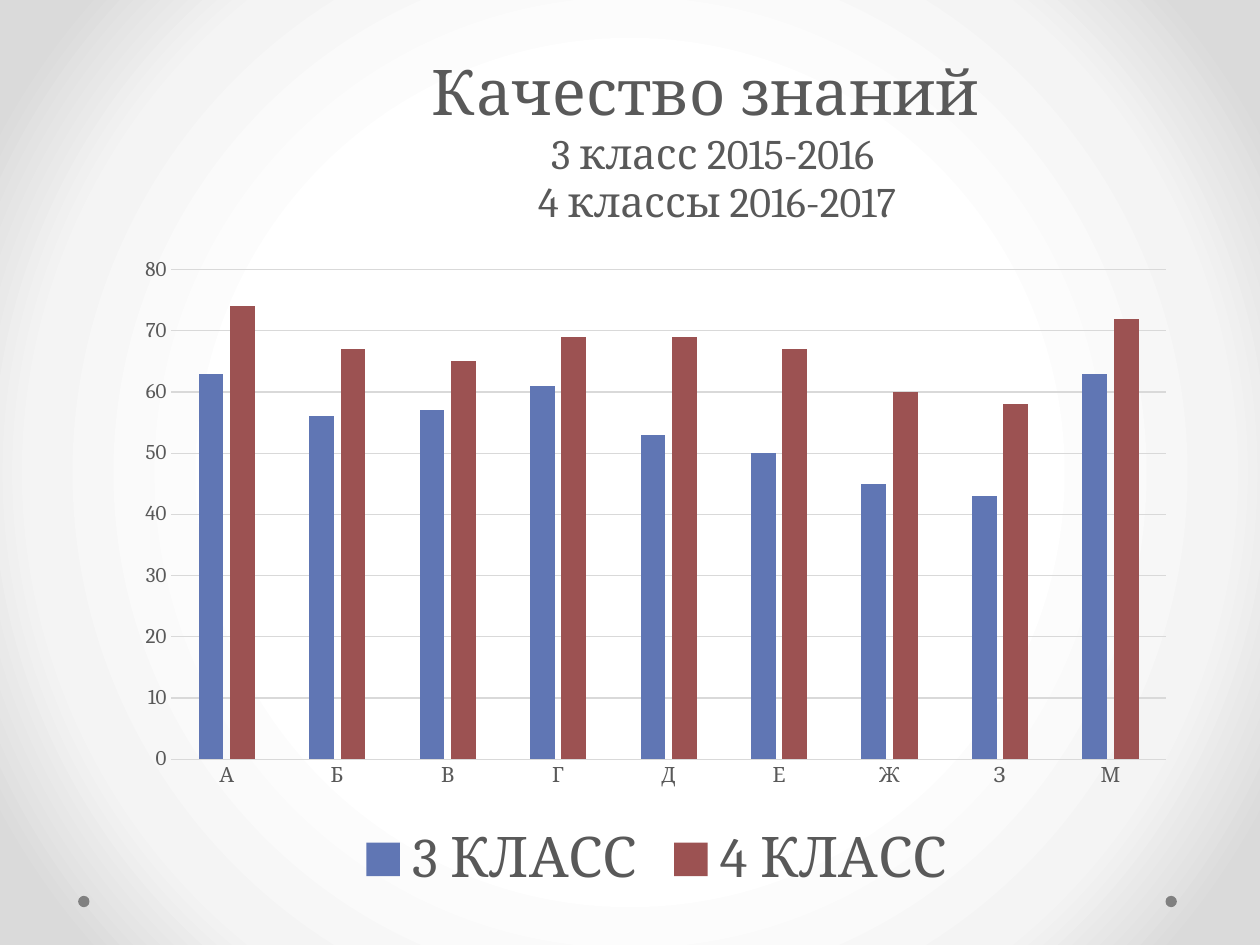
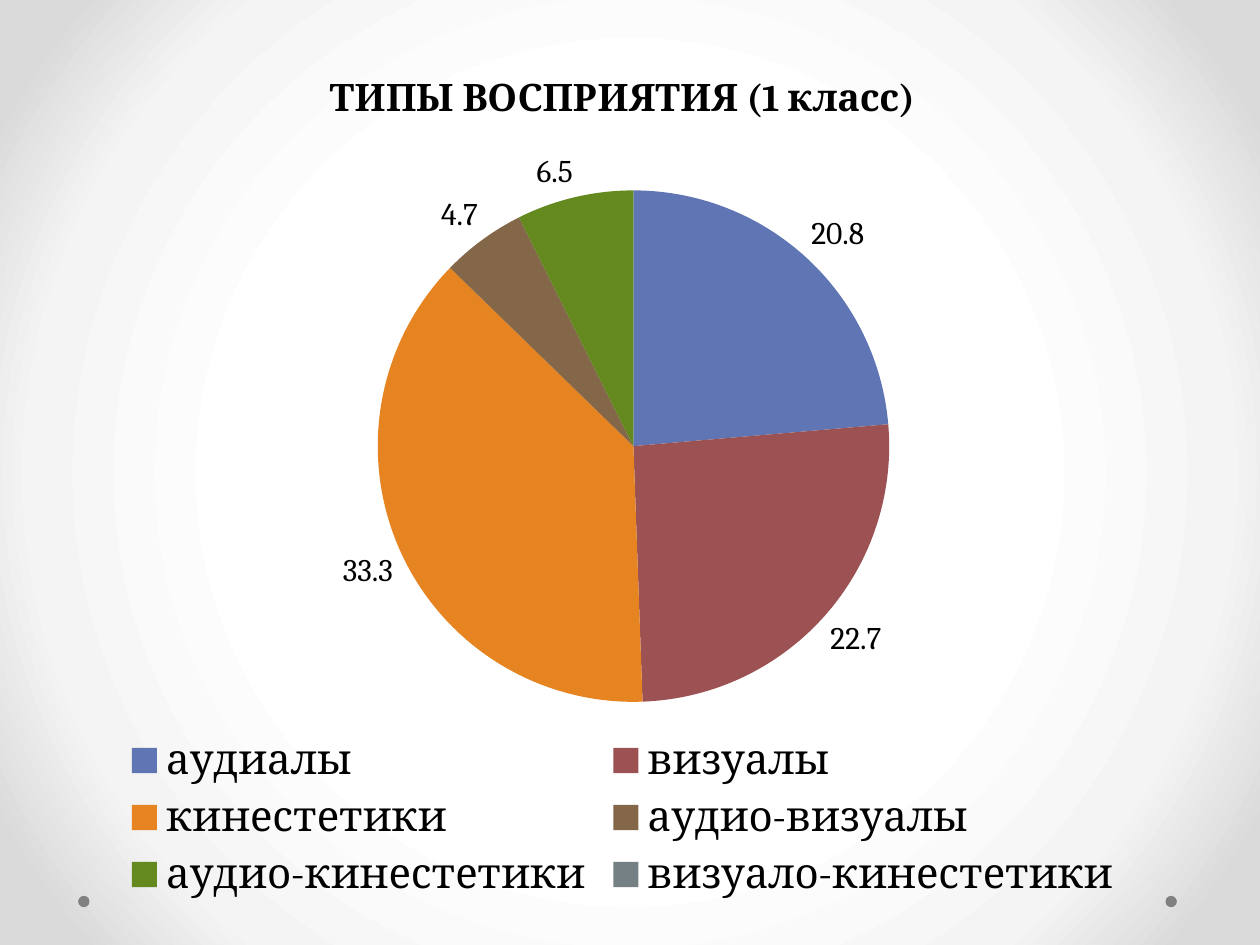
from lxml import etree
from pptx import Presentation
from pptx.chart.data import CategoryChartData
from pptx.dml.color import RGBColor
from pptx.enum.chart import XL_CHART_TYPE, XL_LABEL_POSITION, XL_LEGEND_POSITION, XL_TICK_MARK
from pptx.enum.shapes import MSO_SHAPE
from pptx.enum.text import PP_ALIGN
from pptx.oxml.ns import qn
from pptx.util import Inches, Pt

FONT = "Cambria"
COLORS = {
    "black": "000000", "gray_text": "595959", "grid": "D9D9D9", "dot": "808080",
    "blue": "6076B4", "red": "9C5252", "orange": "E68422",
    "brown": "846648", "green": "63891F", "slate": "758085",
}
BACKGROUND_STOPS = [(50, "FFFFFF"), (76, "F4F4F4"), (92, "DADADA")]
DOT_LEFTS, DOT_TOP, DOT_SIZE = (9.25, 0.62), 7.11, 0.09

QUALITY = {
    "box": (0.99, 0.28, 8.44, 6.89),
    "plot": {"x": 0.044, "y": 0.27, "w": 0.935, "h": 0.564},
    "title_place": {"x": 0.285, "y": 0.02},
    "title": [("Качество знаний ", 36), ("3 класс 2015-2016", 24), (" 4 классы 2016-2017", 24)],
    "categories": list("АБВГДЕЖЗМ"),
    "series": [
        ("3 КЛАСС", [63, 56, 57, 61, 53, 50, 45, 43, 63], "blue"),
        ("4 КЛАСС", [74, 67, 65, 69, 69, 67, 60, 58, 72], "red"),
    ],
}
PERCEPTION = {
    "box": (0.54, 0.33, 8.8, 6.87),
    "plot": {"x": 0.279, "y": 0.172, "w": 0.462, "h": 0.591},
    "title": [("ТИПЫ ВОСПРИЯТИЯ (1 класс)", 21.6)],
    "types": [
        ("аудиалы", 20.8, "blue"),
        ("визуалы", 22.7, "red"),
        ("кинестетики", 33.3, "orange"),
        ("аудио-визуалы", 4.7, "brown"),
        ("аудио-кинестетики", 6.5, "green"),
        ("визуало-кинестетики", None, "slate"),
    ],
}


def rgb(name):
    return RGBColor.from_string(COLORS[name])


def paint(fill, color):
    fill.solid()
    fill.fore_color.rgb = rgb(color)


def style_font(font, size, color, bold=False):
    font.name, font.size, font.bold = FONT, Pt(size), bold
    font.color.rgb = rgb(color)


def style_line(line):
    line.color.rgb = rgb("grid")
    line.width = Pt(0.75)


def set_background(master):
    """Give every slide a radial gradient, light in the middle."""
    master.background.fill.gradient()
    gradient = next(master.element.iter(qn("a:gradFill")))
    for child in list(gradient):
        gradient.remove(child)
    stops = etree.SubElement(gradient, qn("a:gsLst"))
    for position, color in BACKGROUND_STOPS:
        stop = etree.SubElement(stops, qn("a:gs"), pos=str(position * 1000))
        etree.SubElement(stop, qn("a:srgbClr"), val=color)
    circle = etree.SubElement(gradient, qn("a:path"), path="circle")
    etree.SubElement(circle, qn("a:fillToRect"), {side: "50000" for side in "ltrb"})


def place(element, index, fractions, inner=False):
    """Fix a chart part at fractions of the chart's width and height."""
    for layout in element.findall(qn("c:layout")):
        element.remove(layout)
    layout = etree.Element(qn("c:layout"))
    element.insert(index, layout)
    manual = etree.SubElement(layout, qn("c:manualLayout"))
    if inner:
        etree.SubElement(manual, qn("c:layoutTarget"), val="inner")
    for axis in "xy":
        etree.SubElement(manual, qn(f"c:{axis}Mode"), val="edge")
    for key, value in fractions.items():
        etree.SubElement(manual, qn(f"c:{key}"), val=str(value))


def add_slide(presentation):
    slide = presentation.slides.add_slide(presentation.slide_layouts[6])
    for left in DOT_LEFTS:
        dot = slide.shapes.add_shape(MSO_SHAPE.OVAL, Inches(left), Inches(DOT_TOP),
                                     Inches(DOT_SIZE), Inches(DOT_SIZE))
        dot.shadow.inherit = False
        paint(dot.fill, "dot")
        dot.line.fill.background()
    return slide


def add_chart(slide, kind, content, data, color, base_size, legend_size, bold_title=False):
    box = [Inches(length) for length in content["box"]]
    chart = slide.shapes.add_chart(kind, *box, data).chart
    style_font(chart.font, base_size, "black")
    chart.has_title = True
    frame = chart.chart_title.text_frame
    for number, (text, size) in enumerate(content["title"]):
        paragraph = frame.add_paragraph() if number else frame.paragraphs[0]
        paragraph.alignment = PP_ALIGN.CENTER
        run = paragraph.add_run()
        run.text = text
        style_font(run.font, size, color, bold_title)
    chart.chart_title.include_in_layout = False
    if "title_place" in content:
        place(chart.element.find(".//" + qn("c:title")), 1, content["title_place"])
    place(chart.element.find(".//" + qn("c:plotArea")), 0, content["plot"], inner=True)
    chart.has_legend = True
    chart.legend.position = XL_LEGEND_POSITION.BOTTOM
    chart.legend.include_in_layout = False
    style_font(chart.legend.font, legend_size, color)
    return chart


def build_quality(presentation):
    data = CategoryChartData()
    data.categories = QUALITY["categories"]
    for name, values, _ in QUALITY["series"]:
        data.add_series(name, values)
    chart = add_chart(add_slide(presentation), XL_CHART_TYPE.COLUMN_CLUSTERED, QUALITY, data,
                      color="gray_text", base_size=10, legend_size=32)
    plot = chart.plots[0]
    plot.gap_width, plot.overlap, plot.vary_by_categories = 219, -27, False
    for series, (_, _, color) in zip(plot.series, QUALITY["series"]):
        paint(series.format.fill, color)
    for axis in (chart.category_axis, chart.value_axis):
        axis.major_tick_mark = axis.minor_tick_mark = XL_TICK_MARK.NONE
        style_font(axis.tick_labels.font, 12, "gray_text")
    style_line(chart.category_axis.format.line)
    values = chart.value_axis
    values.minimum_scale, values.maximum_scale, values.major_unit = 0, 80, 10
    values.format.line.fill.background()
    style_line(values.major_gridlines.format.line)


def build_perception(presentation):
    names, values, colors = zip(*PERCEPTION["types"])
    data = CategoryChartData()
    data.categories = names
    data.add_series(PERCEPTION["title"][0][0], values)
    chart = add_chart(add_slide(presentation), XL_CHART_TYPE.PIE, PERCEPTION, data,
                      color="black", base_size=18, legend_size=24, bold_title=True)
    plot = chart.plots[0]
    plot.vary_by_categories = True
    for index, color in enumerate(colors):
        paint(plot.series[0].points[index].format.fill, color)
    labels = plot.series[0].data_labels
    labels.show_value = True
    labels.position = XL_LABEL_POSITION.OUTSIDE_END
    labels.number_format, labels.number_format_is_linked = "0.0", False
    style_font(labels.font, 18, "black")


def main():
    presentation = Presentation()
    presentation.slide_width, presentation.slide_height = Inches(10), Inches(7.5)
    set_background(presentation.slide_master)
    build_quality(presentation)
    build_perception(presentation)
    presentation.save("out.pptx")


if __name__ == "__main__":
    main()
